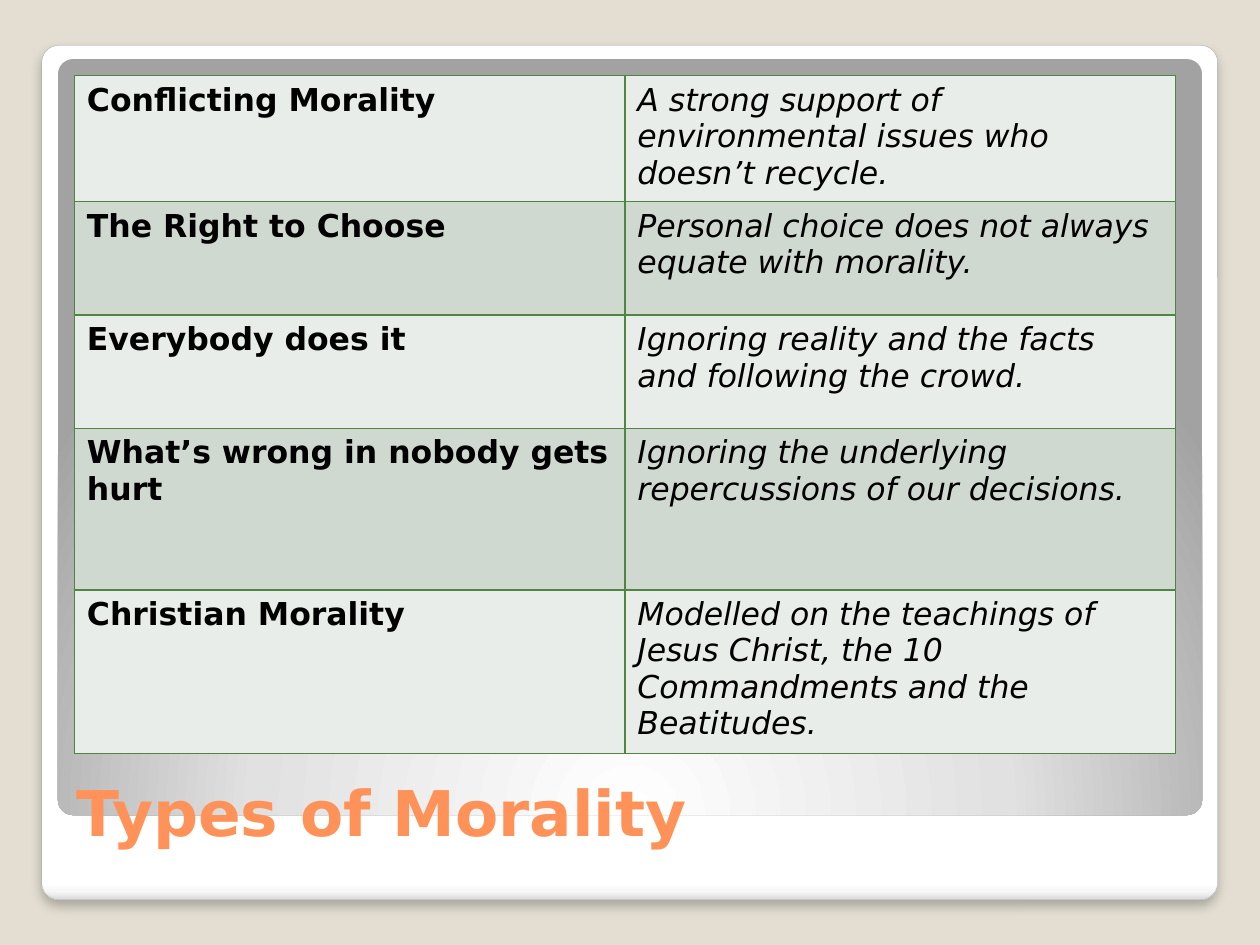
from lxml import etree
from pptx import Presentation, util as u
from pptx.dml import color
from pptx.enum import shapes, text
from pptx.oxml import ns

Pt = u.Pt


def rgb(code):
    return color.RGBColor.from_string(code)


def node(up, tag, **atts):
    return etree.SubElement(up, ns.qn("a:" + tag), {k: str(v) for k, v in atts.items()})


deck = Presentation()
deck.slide_width, deck.slide_height = Pt(720), Pt(540)
slide = deck.slides.add_slide(deck.slide_layouts[6])
slide.background.fill.solid()
slide.background.fill.fore_color.rgb = rgb("E3DED1")

panels = [
    {"box": (23.8, 25.9, 672, 488.2), "path": False,
     "stops": [(0, "FFFFFF"), (98, "FFFFFF"), (99, "F7F7F7"), (100, "DADADA")]},
    {"box": (33.1, 33.8, 653.8, 432), "path": True,
     "stops": [(0, "FFFFFF"), (55, "E1E1E1"), (100, "A2A2A2")]},
]
for panel in panels:
    card = slide.shapes.add_shape(
        shapes.MSO_SHAPE.ROUNDED_RECTANGLE, *map(Pt, panel["box"]))
    card.adjustments[0] = 0.02
    card.shadow.inherit = False
    props = card.element.spPr
    grad = node(props, "gradFill", rotWithShape=1)
    stops = node(grad, "gsLst")
    for pos, code in panel["stops"]:
        node(node(stops, "gs", pos=pos * 1000), "srgbClr", val=code)
    if panel["path"]:
        focus = node(grad, "path", path="circle")
        node(focus, "fillToRect", l=50000, t=175000, r=50000, b=-75000)
        card.line.fill.background()
    else:
        node(grad, "lin", ang=5400000, scaled=0)
        card.line.color.rgb = rgb("A4A4A4")
        card.line.width = Pt(0.16)
        glow = node(props.find(ns.qn("a:effectLst")), "outerShdw",
                    blurRad=Pt(6), dist=Pt(4), dir=5400000, algn="t", rotWithShape=0)
        node(node(glow, "srgbClr", val="000000"), "alpha", val=25000)
    props.find(ns.qn("a:prstGeom")).addnext(grad)

title = slide.shapes.add_textbox(*map(Pt, (36.7, 406.1, 644.4, 82.8)))
frame = title.text_frame
frame.word_wrap = True
frame.vertical_anchor = text.MSO_ANCHOR.BOTTOM
run = frame.paragraphs[0].add_run()
run.text = "Types of Morality"
for key, val in {"name": "DejaVu Sans", "size": Pt(36), "bold": True}.items():
    setattr(run.font, key, val)
run.font.color.rgb = rgb("FF9258")

rows = [
    ("Conflicting Morality",
     "A strong support of environmental issues who doesn’t recycle."),
    ("The Right to Choose",
     "Personal choice does not always equate with morality."),
    ("Everybody does it",
     "Ignoring reality and the facts and following the crowd."),
    ("What’s wrong in nobody gets hurt",
     "Ignoring the underlying repercussions of our decisions."),
    ("Christian Morality",
     "Modelled on the teachings of Jesus Christ, the 10 Commandments and the Beatitudes."),
]
highs = [64.8, 64.8, 64.8, 92.2, 64.8]
looks = [{"bold": True, "italic": False}, {"bold": False, "italic": True}]
bands = ["E9EDE9", "D0D9CF"]

grid = slide.shapes.add_table(
    len(rows), 2, Pt(42.5), Pt(43.2), Pt(629.2), Pt(sum(highs))).table
grid.first_row = grid.horz_banding = False
for col in grid.columns:
    col.width = Pt(314.6)
for i, (pair, high) in enumerate(zip(rows, highs)):
    grid.rows[i].height = Pt(high)
    for j, words in enumerate(pair):
        cell = grid.cell(i, j)
        run = cell.text_frame.paragraphs[0].add_run()
        run.text = words
        for key, val in {"name": "DejaVu Sans", "size": Pt(18), **looks[j]}.items():
            setattr(run.font, key, val)
        run.font.color.rgb = rgb("000000")
        edges = cell._tc.get_or_add_tcPr()
        for side in ("lnL", "lnR", "lnT", "lnB"):
            edge = node(edges, side, w=Pt(1))
            node(node(edge, "solidFill"), "srgbClr", val="4E8542")
        cell.fill.solid()
        cell.fill.fore_color.rgb = rgb(bands[i % 2])

deck.save("out.pptx")
